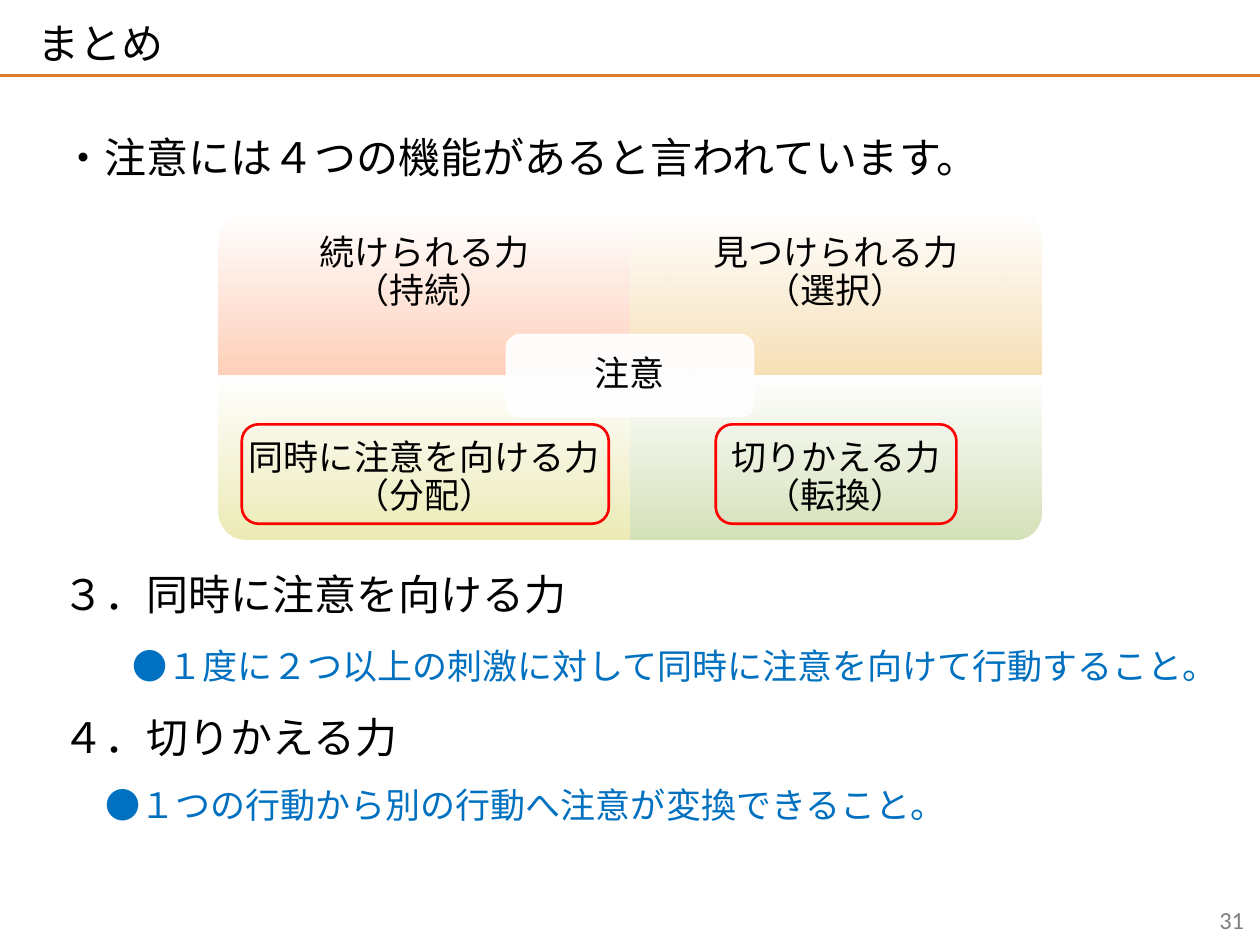
from lxml.etree import SubElement
from pptx import Presentation
from pptx.dml.color import RGBColor
from pptx.enum.shapes import MSO_CONNECTOR, MSO_SHAPE
from pptx.enum.text import MSO_ANCHOR, MSO_AUTO_SIZE, PP_ALIGN
from pptx.oxml.ns import qn
from pptx.util import Pt

JAPANESE_FONT = "Noto Sans CJK JP"
COLORS = {
    "text": "000000",
    "answer": "0070C0",
    "rule": "DC7C2E",
    "number": "7F7F7F",
    "highlight": "FF0000",
    "white": "FFFFFF",
    "sustain": "FFD0B9",
    "select": "F7E0B6",
    "divide": "ECEBB6",
    "switch": "D5E1B9",
}
CENTER_X, CENTER_Y = 360, 214.5
CELL_WIDTH, CELL_HEIGHT = 235.2, 93.6
LABEL_HEIGHT = 70
QUADRANTS = [
    (0, 0, 270, "sustain", ["続けられる力", "（持続）"]),
    (1, 0, 0, "select", ["見つけられる力", "（選択）"]),
    (0, 1, 180, "divide", ["同時に注意を向ける力", "（分配）"]),
    (1, 1, 90, "switch", ["切りかえる力", "（転換）"]),
]
BODY_LINES = [
    ("・注意には４つの機能があると言われています。", 24, "text", 0, 0, 1),
    ("３．同時に注意を向ける力", 24, "text", 0, 207, 1.5),
    ("●１度に２つ以上の刺激に対して同時に注意を向けて行動すること。", 20, "answer", 40, 2.5, 1.5),
    ("４．切りかえる力", 24, "text", 0, 0, 1.5),
    ("●１つの行動から別の行動へ注意が変換できること。", 20, "answer", 24.5, 0, 1.5),
]


def color(name):
    return RGBColor.from_string(COLORS[name])


def place(shape, left, top, width, height):
    shape.left, shape.top = Pt(left), Pt(top)
    shape.width, shape.height = Pt(width), Pt(height)


def add_run(paragraph, text, size, color_name="text", font=JAPANESE_FONT):
    run = paragraph.add_run()
    run.text = text
    run.font.size = Pt(size)
    run.font.color.rgb = color(color_name)
    run.font.name = font
    SubElement(run.font._element, qn("a:ea")).set("typeface", font)


def set_indent(paragraph, left, first=0):
    properties = paragraph._p.get_or_add_pPr()
    properties.set("marL", str(Pt(left)))
    properties.set("indent", str(Pt(first)))
    return properties


def fill_title(title):
    place(title, 14.4, 3.6, 640, 51)
    frame = title.text_frame
    frame.auto_size = MSO_AUTO_SIZE.NONE
    frame.vertical_anchor = MSO_ANCHOR.MIDDLE
    paragraph = frame.paragraphs[0]
    set_indent(paragraph, 48, -48)
    paragraph.alignment = PP_ALIGN.LEFT
    paragraph.line_spacing = 0.6
    add_run(paragraph, "まとめ", 24)


def fill_body(body):
    place(body, 28.4, 71.3, 663.2, 459.4)
    frame = body.text_frame
    frame.auto_size = MSO_AUTO_SIZE.NONE
    frame.vertical_anchor = MSO_ANCHOR.TOP
    for index, (text, size, color_name, indent, before, spacing) in enumerate(BODY_LINES):
        paragraph = frame.add_paragraph() if index else frame.paragraphs[0]
        SubElement(set_indent(paragraph, indent), qn("a:buNone"))
        paragraph.space_before = Pt(before)
        paragraph.line_spacing = spacing
        add_run(paragraph, text, size, color_name)


def add_text_box(slide, box, inset, alignment):
    frame = slide.shapes.add_textbox(*map(Pt, box)).text_frame
    frame.word_wrap = True
    frame.vertical_anchor = MSO_ANCHOR.MIDDLE
    frame.margin_left = frame.margin_right = Pt(inset)
    frame.margin_top = frame.margin_bottom = Pt(inset)
    frame.paragraphs[0].alignment = alignment
    return frame.paragraphs[0]


def add_label(slide, box, lines, inset):
    paragraph = add_text_box(slide, box, inset, PP_ALIGN.CENTER)
    paragraph.line_spacing = 0.9
    paragraph.space_after = Pt(7)
    for index, line in enumerate(lines):
        if index:
            paragraph.add_line_break()
        add_run(paragraph, line, 20)


def add_gradient_shape(slide, kind, box, color_name, rotation=0):
    left, top, width, height = box
    if rotation % 180:
        left, top = left + (width - height) / 2, top + (height - width) / 2
        width, height = height, width
    shape = slide.shapes.add_shape(kind, Pt(left), Pt(top), Pt(width), Pt(height))
    shape.rotation = rotation
    shape.shadow.inherit = False
    shape.line.fill.background()
    shape.fill.gradient()
    shape.fill.gradient_angle = 270
    first, last = shape.fill.gradient_stops
    first.position, last.position = 0, 1
    first.color.rgb, last.color.rgb = color("white"), color(color_name)
    gradient = shape._element.spPr.find(qn("a:gradFill"))
    gradient.set("rotWithShape", "0")
    SubElement(gradient.find(".//" + qn("a:srgbClr")), qn("a:alpha")).set("val", "94000")
    return shape


def add_attention_matrix(slide):
    for column, row, rotation, color_name, lines in QUADRANTS:
        left = CENTER_X + (column - 1) * CELL_WIDTH
        top = CENTER_Y + (row - 1) * CELL_HEIGHT
        cell = (left, top, CELL_WIDTH, CELL_HEIGHT)
        add_gradient_shape(slide, MSO_SHAPE.ROUND_1_RECTANGLE, cell, color_name, rotation)
        label_top = top + row * (CELL_HEIGHT - LABEL_HEIGHT)
        add_label(slide, (left, label_top, CELL_WIDTH, LABEL_HEIGHT), lines, 11.5)
    center = (289.3, 191.2, 141.4, 46.8)
    hub = add_gradient_shape(slide, MSO_SHAPE.ROUNDED_RECTANGLE, center, "white")
    hub.line.color.rgb = color("white")
    hub.line.width = Pt(0.75)
    add_label(slide, center, ["注意"], 6)


def add_highlight(slide, left, width):
    frame = slide.shapes.add_shape(
        MSO_SHAPE.ROUNDED_RECTANGLE, Pt(left), Pt(242.5), Pt(width), Pt(56.8))
    frame.shadow.inherit = False
    frame.fill.background()
    frame.line.color.rgb = color("highlight")
    frame.line.width = Pt(1.5)


def add_rule(slide):
    rule = slide.shapes.add_connector(
        MSO_CONNECTOR.STRAIGHT, Pt(0), Pt(43), Pt(720), Pt(43))
    rule.line.color.rgb = color("rule")
    rule.line.width = Pt(1.5)
    SubElement(rule._element.spPr, qn("a:effectLst"))


def main():
    presentation = Presentation()
    presentation.slide_width, presentation.slide_height = Pt(720), Pt(540)
    slide = presentation.slides.add_slide(presentation.slide_layouts[1])
    fill_title(slide.shapes.title)
    fill_body(slide.placeholders[1])
    add_rule(slide)
    number = add_text_box(slide, (550, 511.2, 168, 28.8), 7.2, PP_ALIGN.RIGHT)
    add_run(number, "31", 14, "number", "Calibri")
    add_attention_matrix(slide)
    add_highlight(slide, 138.2, 209.7)
    add_highlight(slide, 409, 137.5)
    presentation.save("out.pptx")


if __name__ == "__main__":
    main()
